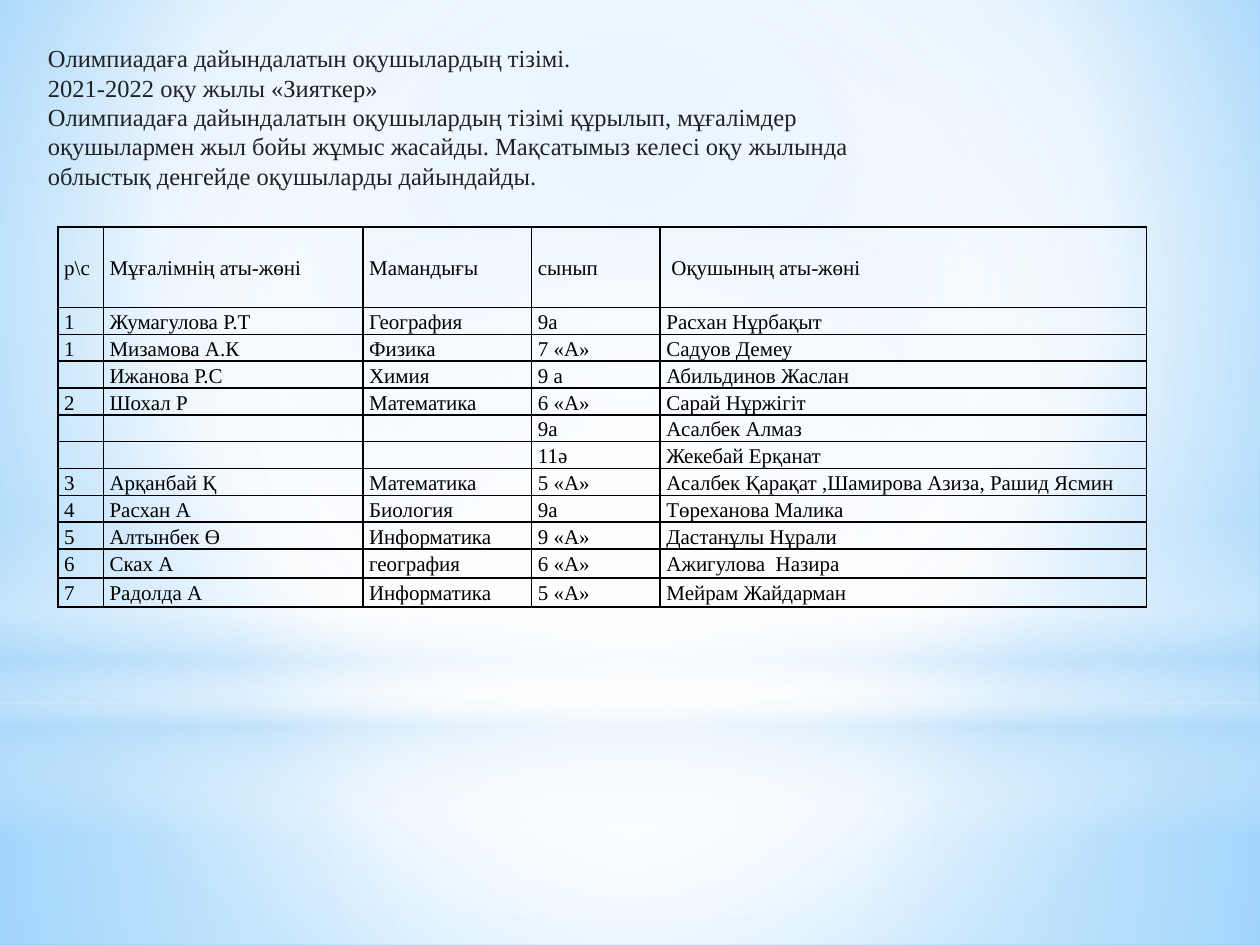
"""Build a slide listing the pupils who are preparing for the olympiad."""
from dataclasses import dataclass

from lxml import etree
from pptx import Presentation
from pptx import util as u
from pptx.dml.color import RGBColor
from pptx.enum import shapes, text
from pptx.oxml import parse_xml
from pptx.oxml.ns import nsdecls, qn


@dataclass(frozen=True)
class Theme:
    font: str = "Times New Roman"
    title_size: int = 14
    cell_size: int = 12
    title_color: str = "202124"
    cell_color: str = "000000"
    white: str = "FFFFFF"
    mist: str = "B4DCFA"
    sky: str = "9ED5FF"
    deep_sky: str = "5BB9FF"


theme = Theme()


def write_text(frame, lines, *, size, color, spacing=1.0, anchor=text.MSO_ANCHOR.TOP):
    frame.vertical_anchor = anchor
    frame.word_wrap = True
    for index, line in enumerate(lines):
        para = frame.paragraphs[0] if index == 0 else frame.add_paragraph()
        para.alignment = text.PP_ALIGN.LEFT
        para.line_spacing = spacing
        if not line:
            etree.SubElement(para._p, qn("a:endParaRPr"), sz=str(size * 100))
            continue
        span = para.add_run()
        span.text = line
        span.font.name = theme.font
        span.font.size = u.Pt(size)
        span.font.bold = False
        span.font.color.rgb = RGBColor.from_string(color)


def gradient(stops, focus=None):
    marks = "".join(
        f'<a:gs pos="{place * 1000}"><a:srgbClr val="{color}">'
        f'<a:alpha val="{alpha * 1000}"/></a:srgbClr></a:gs>'
        for place, color, alpha in stops)
    direction = '<a:lin ang="5400000" scaled="0"/>'
    if focus:
        sides = " ".join(f'{side}="{share * 1000}"' for side, share in zip("ltrb", focus))
        direction = f'<a:path path="circle"><a:fillToRect {sides}/></a:path>'
    return parse_xml(f'<a:gradFill {nsdecls("a")} rotWithShape="1">'
                     f'<a:gsLst>{marks}</a:gsLst>{direction}</a:gradFill>')


deck = Presentation()
deck.slide_width, deck.slide_height = u.Inches(10), u.Inches(7.5)
width, height = deck.slide_width, deck.slide_height
page = deck.slides.add_slide(deck.slide_layouts[5])

backdrop = page.background.fill
backdrop.solid()
solid = page.background._cSld.bg.bgPr.find(qn("a:solidFill"))
solid.getparent().replace(solid, gradient(
    [(0, theme.sky, 100), (60, theme.white, 100), (100, theme.deep_sky, 100)],
    (20, 10, 20, 60)))

centre = (50, 50, 50, 50)
rectangle, ellipse = shapes.MSO_SHAPE.RECTANGLE, shapes.MSO_SHAPE.OVAL
glows = [
    (rectangle, 0.744, 0.256, centre,
     [(0, theme.white, 91), (37, theme.white, 76), (100, theme.mist, 79)]),
    (rectangle, 0, 0.744, centre,
     [(0, theme.white, 89), (48, theme.white, 62), (100, theme.mist, 79)]),
    (rectangle, 0.55, 0.333, None,
     [(0, theme.white, 0), (29, theme.white, 30), (45, theme.mist, 40),
      (55, theme.white, 26), (65, theme.mist, 60), (100, theme.white, 0)]),
    (ellipse, 0.233, 0.744, centre, [(0, theme.white, 100), (56, theme.white, 0)]),
]
for kind, top, share, focus, stops in glows:
    glow = page.shapes.add_shape(kind, 0, int(height * top), width, int(height * share))
    glow.shadow.inherit = False
    glow.line.fill.background()
    glow.fill.solid()
    solid = glow._element.spPr.find(qn("a:solidFill"))
    solid.getparent().replace(solid, gradient(stops, focus))

rows = [
    ("р\\с", "Мұғалімнің аты-жөні", "Мамандығы", "сынып", "Оқушының аты-жөні"),
    ("1", "Жумагулова Р.Т", "География", "9а", "Расхан Нұрбақыт"),
    ("1", "Мизамова А.К", "Физика", "7 «А»", "Садуов Демеу"),
    ("", "Ижанова Р.С", "Химия", "9 а", "Абильдинов Жаслан"),
    ("2", "Шохал Р", "Математика", "6 «А»", "Сарай Нұржігіт"),
    ("", "", "", "9а", "Асалбек Алмаз"),
    ("", "", "", "11ә", "Жекебай Ерқанат"),
    ("3", "Арқанбай Қ", "Математика", "5 «А»",
     "Асалбек Қарақат ,Шамирова Азиза, Рашид Ясмин"),
    ("4", "Расхан А", "Биология", "9а", "Төреханова Малика"),
    ("5", "Алтынбек Ө", "Информатика", "9 «А»", "Дастанұлы Нұрали"),
    ("6", "Сках А", "география", "6 «А»", "Ажигулова  Назира"),
    ("7", "Радолда А", "Информатика", "5 «А»", "Мейрам Жайдарман"),
]
column_widths = [0.36, 2.06, 1.34, 1.02, 3.86]
row_heights = [0.64] + [0.21] * 9 + [0.23] * 2
pupils = page.shapes.add_table(
    len(rows), len(column_widths), int(width * 0.046), int(height * 0.24),
    u.Inches(sum(column_widths)), u.Inches(sum(row_heights))).table
pupils.first_row = pupils.horz_banding = False
for column, size in zip(pupils.columns, column_widths):
    column.width = u.Inches(size)
for row, size, words in zip(pupils.rows, row_heights, rows):
    row.height = u.Inches(size)
    for cell, word in zip(row.cells, words):
        cell.margin_left = cell.margin_right = u.Inches(0.05)
        cell.margin_top = cell.margin_bottom = 0
        anchor = text.MSO_ANCHOR.MIDDLE if words is rows[0] else text.MSO_ANCHOR.TOP
        write_text(cell.text_frame, [word], size=theme.cell_size,
                   color=theme.cell_color, spacing=1.15)
        cell.vertical_anchor = anchor
        properties = cell._tc.get_or_add_tcPr()
        for side in ("lnL", "lnR", "lnT", "lnB"):
            properties.append(parse_xml(
                f'<a:{side} {nsdecls("a")} w="12700"><a:solidFill>'
                f'<a:srgbClr val="{theme.cell_color}"/></a:solidFill></a:{side}>'))
        cell.fill.background()
pupils.cell(0, 4).margin_left = u.Inches(0.09)

title = page.shapes.title
title.left, title.top = int(width * 0.028), int(height * 0.039)
title.width, title.height = int(width * 0.736), int(height * 0.201)
title.text_frame.auto_size = text.MSO_AUTO_SIZE.NONE
write_text(title.text_frame, [
    "Олимпиадаға дайындалатын оқушылардың тізімі.",
    "2021-2022 оқу жылы «Зияткер»",
    "Олимпиадаға дайындалатын оқушылардың тізімі құрылып, мұғалімдер "
    "оқушылармен жыл бойы жұмыс жасайды. Мақсатымыз келесі оқу жылында "
    "облыстық денгейде оқушыларды дайындайды.",
], size=theme.title_size, color=theme.title_color)
page.shapes._spTree.append(title._element)

deck.save("out.pptx")
